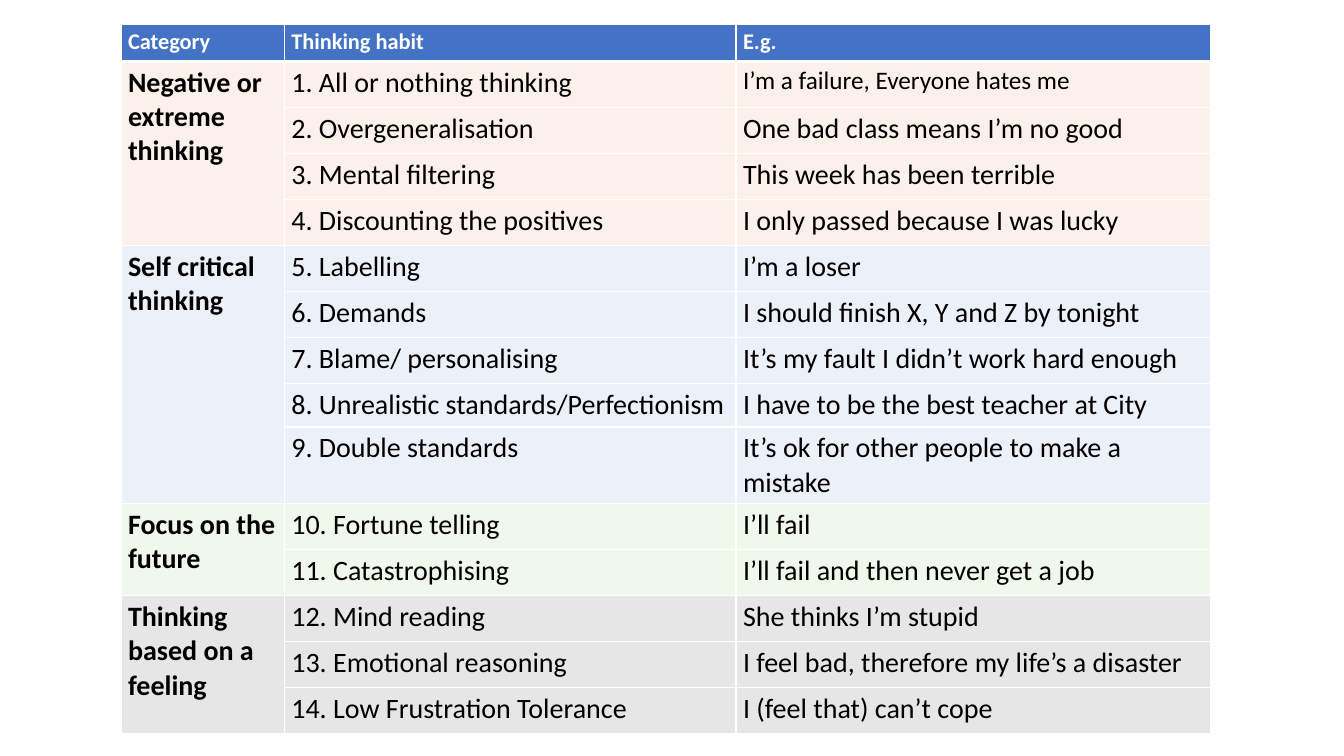
from dataclasses import dataclass

from lxml.etree import SubElement
from pptx import Presentation
from pptx.dml.color import RGBColor
from pptx.oxml.ns import qn
from pptx.table import _Cell
from pptx.util import Inches, Pt

WHITE = RGBColor(0xFF, 0xFF, 0xFF)
BLACK = RGBColor(0x00, 0x00, 0x00)
BLUE = RGBColor(0x44, 0x72, 0xC4)
PEACH = RGBColor(0xFB, 0xE5, 0xD6)
PALE_BLUE = RGBColor(0xDA, 0xE3, 0xF3)
PALE_GREEN = RGBColor(0xE2, 0xF0, 0xD9)
GREY = RGBColor(0xD0, 0xCE, 0xCE)

HEADINGS = ("Category", "Thinking habit", "E.g.")
COLUMN_WIDTHS = (1.62, 4.48, 4.71)
HEADING_HEIGHT = 0.37
HABIT_HEIGHT = 5.94 / 13
PERFECTIONISM_ROW, PERFECTIONISM_HEIGHT = 8, 0.43
MARGINS = {
    "margin_left": Inches(0.07),
    "margin_right": Inches(0.07),
    "margin_top": Inches(0.04),
    "margin_bottom": Inches(0.04),
}


@dataclass(frozen=True)
class Habit:
    name: str
    example: str
    example_size: int = 20


@dataclass(frozen=True)
class Category:
    title: str
    tint: RGBColor
    habits: tuple[Habit, ...]


CATEGORIES = (
    Category("Negative or extreme\nthinking", PEACH, (
        Habit("All or nothing thinking", "I’m a failure, Everyone hates me", 18),
        Habit("Overgeneralisation", "One bad class means I’m no good"),
        Habit("Mental filtering", "This week has been terrible"),
        Habit("Discounting the positives", "I only passed because I was lucky"),
    )),
    Category("Self critical thinking", PALE_BLUE, (
        Habit("Labelling", "I’m a loser"),
        Habit("Demands", "I should finish X, Y and Z by tonight"),
        Habit("Blame/ personalising", "It’s my fault I didn’t work hard enough"),
        Habit("Unrealistic standards/Perfectionism", "I have to be the best teacher at City"),
        Habit("Double standards", "It’s ok for other people to make a mistake"),
    )),
    Category("Focus on the future", PALE_GREEN, (
        Habit("Fortune telling", "I’ll fail"),
        Habit("Catastrophising", "I’ll fail and then never get a job"),
    )),
    Category("Thinking based on a feeling", GREY, (
        Habit("Mind reading", "She thinks I’m stupid"),
        Habit("Emotional reasoning", "I feel bad, therefore my life’s a disaster"),
        Habit("Low Frustration Tolerance", "I (feel that) can’t cope"),
    )),
)


def style_cell(cell: _Cell, tint: RGBColor, opacity: int = 100,
               top: int = 1, bottom: int = 1) -> None:
    for name, margin in MARGINS.items():
        setattr(cell, name, margin)
    properties = cell._tc.get_or_add_tcPr()
    for side, width in {"L": 1, "R": 1, "T": top, "B": bottom}.items():
        border = SubElement(properties, qn(f"a:ln{side}"), w=str(Pt(width)))
        stroke = SubElement(border, qn("a:solidFill"))
        SubElement(stroke, qn("a:srgbClr"), val=str(WHITE))
    cell.fill.solid()
    cell.fill.fore_color.rgb = tint
    if opacity < 100:
        color = properties.find(qn("a:solidFill")).find(qn("a:srgbClr"))
        SubElement(color, qn("a:alpha"), val=str(opacity * 1000))


def write_cell(cell: _Cell, text: str, size: int, color: RGBColor, bold: bool) -> None:
    cell.text = text
    font_format = {"name": "Calibri", "size": Pt(size), "bold": bold}
    for paragraph in cell.text_frame.paragraphs:
        for run in paragraph.runs:
            for name, value in font_format.items():
                setattr(run.font, name, value)
            run.font.color.rgb = color


def main() -> None:
    presentation = Presentation()
    presentation.slide_width = Inches(13.33)
    presentation.slide_height = Inches(7.5)
    slide = presentation.slides.add_slide(presentation.slide_layouts[6])

    row_count = 1 + sum(len(category.habits) for category in CATEGORIES)
    habits_table = slide.shapes.add_table(
        row_count, len(HEADINGS), Inches(1.2), Inches(0.24), Inches(10.81), Inches(6.74)
    ).table
    habits_table.horz_banding = False
    for column, width in zip(habits_table.columns, COLUMN_WIDTHS):
        column.width = Inches(width)
    for row in habits_table.rows:
        row.height = Inches(HABIT_HEIGHT)
    habits_table.rows[0].height = Inches(HEADING_HEIGHT)
    habits_table.rows[PERFECTIONISM_ROW].height = Inches(PERFECTIONISM_HEIGHT)

    for column_index, heading in enumerate(HEADINGS):
        heading_cell = habits_table.cell(0, column_index)
        style_cell(heading_cell, BLUE, bottom=3)
        write_cell(heading_cell, heading, 16, WHITE, True)

    number = 1
    for category in CATEGORIES:
        first = number
        for habit in category.habits:
            for column_index in range(len(HEADINGS)):
                style_cell(habits_table.cell(number, column_index), category.tint,
                           opacity=50, top=3 if number == 1 else 1)
            write_cell(habits_table.cell(number, 1), f"{number}. {habit.name}", 20, BLACK, False)
            write_cell(habits_table.cell(number, 2), habit.example,
                       habit.example_size, BLACK, False)
            number += 1
        title_cell = habits_table.cell(first, 0)
        title_cell.merge(habits_table.cell(number - 1, 0))
        write_cell(title_cell, category.title, 20, BLACK, True)

    presentation.save("out.pptx")


if __name__ == "__main__":
    main()
